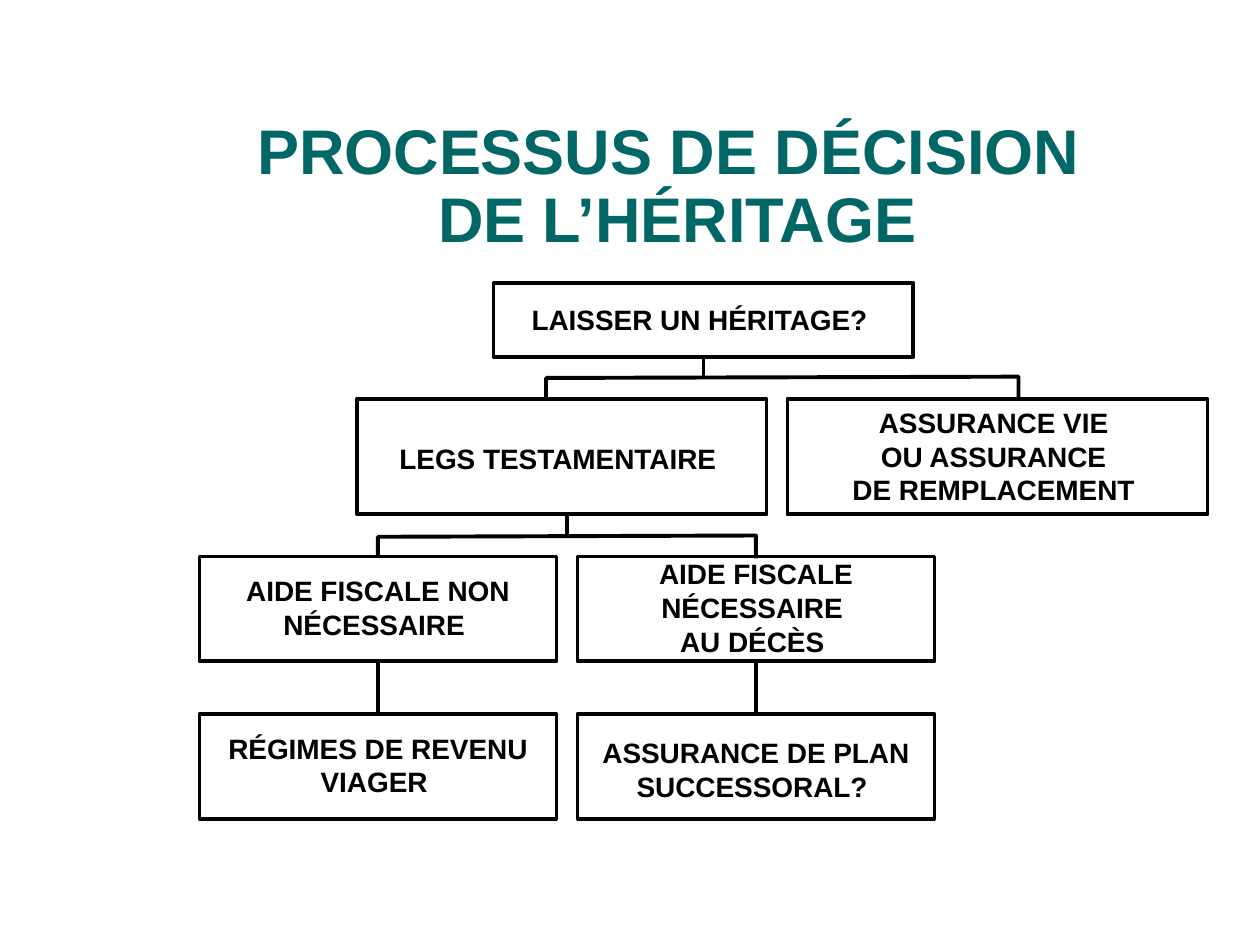
from lxml.etree import SubElement
from pptx import Presentation
from pptx.dml.color import RGBColor
from pptx.enum.shapes import MSO_CONNECTOR, MSO_SHAPE
from pptx.enum.text import MSO_ANCHOR, PP_ALIGN
from pptx.oxml.ns import qn
from pptx.util import Pt


def colour(value):
    return RGBColor.from_string(value)


class DecisionTree:
    """Draws the boxes, captions and links of a decision tree on one slide."""

    ink = "000000"
    paper = "FFFFFF"
    accent = "006666"
    line_width = Pt(2.25)

    def __init__(self, slide):
        self.shapes = slide.shapes

    def outline(self, line):
        line.color.rgb = colour(self.ink)
        line.width = self.line_width

    def caption(self, paragraphs, left, top, width, height, size=16,
                ink=ink, anchor=MSO_ANCHOR.MIDDLE, spacing=1.0):
        area = [Pt(length) for length in (left, top, width, height)]
        frame = self.shapes.add_textbox(*area).text_frame
        frame.word_wrap = True
        frame.vertical_anchor = anchor
        font_format = {"name": "Arial", "size": Pt(size), "bold": True}
        for index, wording in enumerate(paragraphs):
            paragraph = frame.add_paragraph() if index else frame.paragraphs[0]
            paragraph.text = wording
            paragraph.alignment = PP_ALIGN.CENTER
            paragraph.line_spacing = spacing
            for run in paragraph.runs:
                for attribute, value in font_format.items():
                    setattr(run.font, attribute, value)
                run.font.color.rgb = colour(ink)

    def step(self, paragraphs, left, top, width, height, text_top, text_height):
        area = [Pt(length) for length in (left, top, width, height)]
        box = self.shapes.add_shape(MSO_SHAPE.RECTANGLE, *area)
        box.shadow.inherit = False
        box.fill.solid()
        box.fill.fore_color.rgb = colour(self.paper)
        self.outline(box.line)
        self.caption(paragraphs, left, text_top, width, text_height)

    def stem(self, x, top, bottom):
        link = self.shapes.add_connector(
            MSO_CONNECTOR.STRAIGHT, Pt(x), Pt(top), Pt(x), Pt(bottom))
        self.outline(link.line)
        SubElement(link._element.spPr, qn("a:effectLst"))

    def fork(self, *points):
        start, *rest = [(Pt(x), Pt(y)) for x, y in points]
        builder = self.shapes.build_freeform(*start)
        builder.add_line_segments(rest, close=False)
        branch = builder.convert_to_shape()
        branch.shadow.inherit = False
        branch.fill.background()
        self.outline(branch.line)


def main():
    deck = Presentation()
    deck.slide_width, deck.slide_height = Pt(720), Pt(540)
    tree = DecisionTree(deck.slides.add_slide(deck.slide_layouts[6]))

    tree.caption(["PROCESSUS DE DÉCISION \nDE L’HÉRITAGE"], 72, 60, 630, 90,
                 size=36, ink=tree.accent, anchor=MSO_ANCHOR.BOTTOM, spacing=0.9)

    tree.step(["LAISSER UN HÉRITAGE? "], 282, 162, 240, 42, 169, 27)
    tree.step(["LEGS TESTAMENTAIRE "], 204, 228, 234, 66, 248.5, 27)
    tree.step(["ASSURANCE VIE \nOU ASSURANCE \nDE REMPLACEMENT "],
              450, 228, 240, 66, 228, 65)

    without_aid, with_aid = 114, 330
    aid_row, product_row = 318, 408
    for paragraphs, left, top, text_top, text_height in (
        (["AIDE FISCALE NON NÉCESSAIRE "], without_aid, aid_row, 324, 46),
        (["AIDE FISCALE NÉCESSAIRE ", "AU DÉCÈS "], with_aid, aid_row, 314.5, 65),
        (["RÉGIMES DE REVENU VIAGER "], without_aid, product_row, 414, 46),
        (["ASSURANCE DE PLAN SUCCESSORAL? "], with_aid, product_row, 416.5, 46),
    ):
        tree.step(paragraphs, left, top, 204, 60, text_top, text_height)

    tree.stem(402, 204, 216)
    tree.stem(324, 294, 306)
    for left in (without_aid, with_aid):
        tree.stem(left + 102, aid_row + 60, product_row)

    tree.fork((582, 228), (582, 215.25), (312, 216), (312, 227.5))
    tree.fork((432, 319), (432, 306), (216, 306.75), (216, 318))

    deck.save("out.pptx")


if __name__ == "__main__":
    main()
